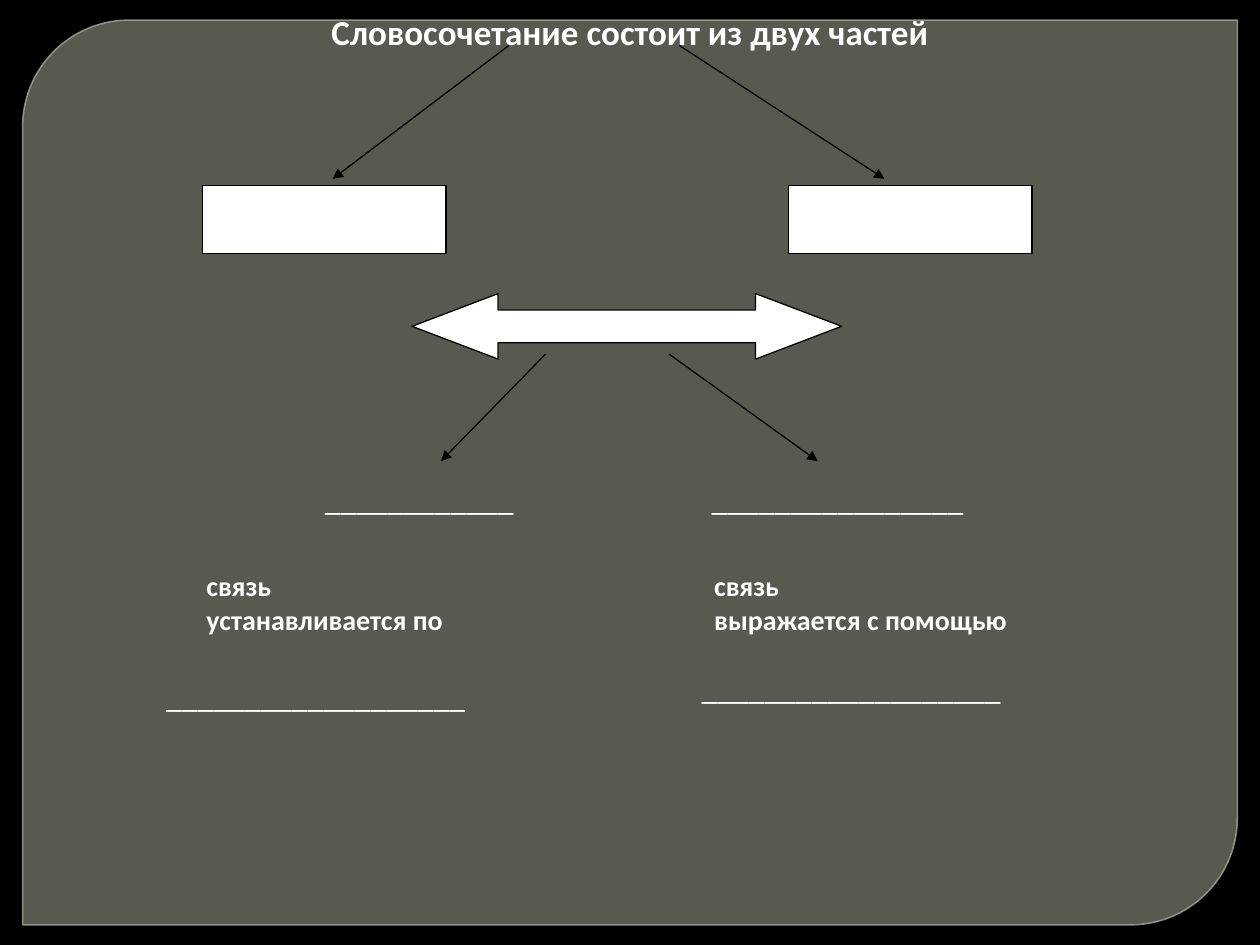
from lxml import etree
from pptx import Presentation
from pptx.dml.color import RGBColor
from pptx.enum.shapes import MSO_CONNECTOR, MSO_SHAPE
from pptx.enum.text import MSO_ANCHOR, MSO_AUTO_SIZE, PP_ALIGN
from pptx.oxml.ns import qn
from pptx.util import Inches, Pt

COLORS = {
    "background": "000000",
    "panel": "888B7B",
    "panel_edge": "9DA090",
    "ink": "000000",
    "white": "FFFFFF",
}
HEADING_FONT = "Calibri"
BLANK_FONT = "TeX Gyre Bonum"


def rgb(name):
    return RGBColor.from_string(COLORS[name])


def set_opacity(fill_parent, percent):
    """Make the solid colour found below the element partly transparent."""
    color = fill_parent.find(qn("a:solidFill"))[0]
    etree.SubElement(color, qn("a:alpha"), val=str(percent * 1000))


def write_text(frame, lines, size, font=HEADING_FONT, bold=False, align=PP_ALIGN.LEFT,
               anchor=MSO_ANCHOR.TOP, wrap=False, tab=None):
    """Fill a text frame with one paragraph per line; tab is a stop in inches."""
    frame.auto_size = MSO_AUTO_SIZE.NONE
    frame.word_wrap = wrap
    frame.vertical_anchor = anchor
    for index, line in enumerate(lines):
        paragraph = frame.add_paragraph() if index else frame.paragraphs[0]
        paragraph.alignment = align
        run = paragraph.add_run()
        run.text = line
        run.font.name, run.font.size, run.font.bold = font, Pt(size), bold
        run.font.color.rgb = rgb("white")
        if tab:
            stops = etree.SubElement(paragraph._p.get_or_add_pPr(), qn("a:tabLst"))
            etree.SubElement(stops, qn("a:tab"), pos=str(Inches(tab)), algn="l")


def add_figure(slide, preset, left, top, width, height, fill="white", edge="ink", weight=0.75):
    figure = slide.shapes.add_shape(
        preset, Inches(left), Inches(top), Inches(width), Inches(height))
    figure.shadow.inherit = False
    figure.fill.solid()
    figure.fill.fore_color.rgb = rgb(fill)
    figure.line.color.rgb = rgb(edge)
    figure.line.width = Pt(weight)
    return figure


def add_arrow(slide, start_x, start_y, end_x, end_y):
    arrow = slide.shapes.add_connector(
        MSO_CONNECTOR.STRAIGHT, Inches(start_x), Inches(start_y), Inches(end_x), Inches(end_y))
    arrow.line.color.rgb = rgb("ink")
    arrow.line.width = Pt(0.75)
    etree.SubElement(arrow.line._get_or_add_ln(), qn("a:tailEnd"), type="triangle")
    etree.SubElement(arrow._element.spPr, qn("a:effectLst"))


def add_blank(slide, left, top, width, length):
    """Place an underscored gap to be filled in by the pupil."""
    blank = slide.shapes.add_textbox(Inches(left), Inches(top), Inches(width), Inches(0.4))
    write_text(blank.text_frame, ["_" * length], 18, font=BLANK_FONT)


def add_panel(slide, left, top, width, height):
    panel = add_figure(slide, MSO_SHAPE.ROUND_2_DIAG_RECTANGLE, left, top, width, height,
                       fill="panel", edge="panel_edge", weight=0.87)
    panel.adjustments[0] = 0.118
    panel.adjustments[1] = 0
    set_opacity(panel._element.spPr, 65)
    set_opacity(panel.line._get_or_add_ln(), 88)
    # The panel lies behind the title placeholder.
    slide.shapes._spTree.insert(2, panel._element)


def place_title(slide, left, top, width, height):
    title = slide.shapes.title
    title.left, title.top = Inches(left), Inches(top)
    title.width, title.height = Inches(width), Inches(height)
    write_text(title.text_frame, ["Словосочетание состоит из двух частей"], 20,
               bold=True, align=PP_ALIGN.CENTER, anchor=MSO_ANCHOR.MIDDLE)


def add_two_parts(slide, left, top, width):
    """Two arrows from the title down to the empty boxes for the two parts."""
    box_width, box_height, box_top = 1.93, 0.54, top + 1.11
    for start, end in ((2.43, 1.03), (3.78, 5.41)):
        add_arrow(slide, left + start, top, left + end, top + 1.06)
    for box_left in (left, left + width - box_width):
        add_figure(slide, MSO_SHAPE.FLOWCHART_PROCESS, box_left, box_top, box_width, box_height)


def add_link_kinds(slide, left, top):
    """The double arrow between the parts and the two kinds of link below it."""
    link = add_figure(slide, MSO_SHAPE.LEFT_RIGHT_ARROW, left + 2.05, top, 3.41, 0.52)
    link.adjustments[0] = 0.5
    link.adjustments[1] = 1.314
    for start, end in ((3.11, 2.28), (4.09, 5.27)):
        add_arrow(slide, left + start, top + 0.48, left + end, top + 1.33)

    add_blank(slide, left + 1.26, top + 1.42, 1.77, 12)
    add_blank(slide, left + 4.33, top + 1.42, 2.22, 16)

    captions = slide.shapes.add_textbox(
        Inches(left + 0.32), Inches(top + 2.13), Inches(7.05), Inches(0.64))
    write_text(captions.text_frame,
               ["связь\tсвязь", "устанавливается по\tвыражается с помощью"], 16,
               bold=True, anchor=MSO_ANCHOR.MIDDLE, wrap=True, tab=4.03)

    add_blank(slide, left, top + 2.99, 2.66, 19)
    add_blank(slide, left + 4.25, top + 2.92, 2.66, 19)


def main():
    deck = Presentation()
    deck.slide_width, deck.slide_height = Inches(10), Inches(7.5)
    slide = deck.slides.add_slide(deck.slide_layouts[5])
    slide.background.fill.solid()
    slide.background.fill.fore_color.rgb = rgb("background")

    add_panel(slide, 0.18, 0.16, 9.64, 7.18)
    place_title(slide, 2.51, 0.03, 4.98, 0.44)
    add_two_parts(slide, 1.61, 0.36, 6.58)
    add_link_kinds(slide, 1.22, 2.33)
    deck.save("out.pptx")


if __name__ == "__main__":
    main()
